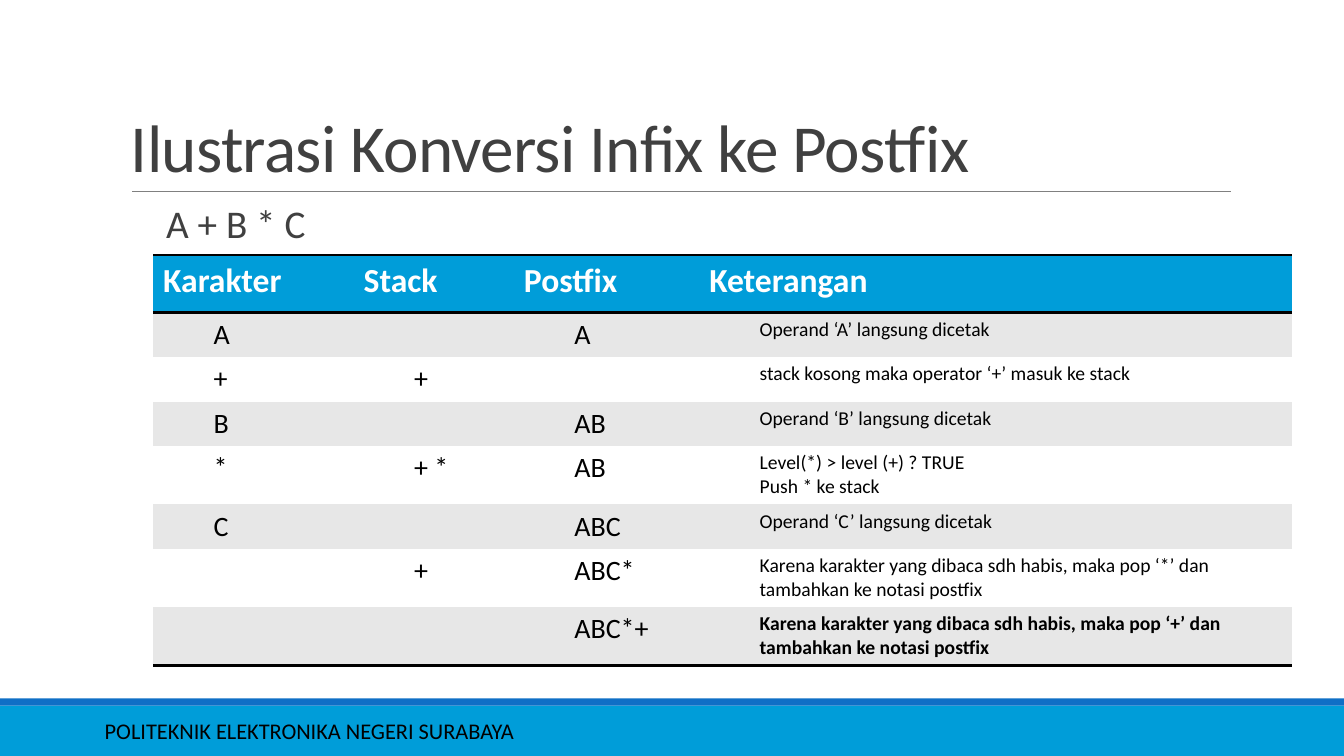
"""Build the slide that traces an infix to postfix conversion."""
from dataclasses import dataclass

from lxml.etree import SubElement
from pptx import Presentation
from pptx.dml.color import RGBColor as Rgb
from pptx.enum.shapes import MSO_CONNECTOR as Connector
from pptx.enum.shapes import MSO_SHAPE as Shape
from pptx.enum.text import MSO_ANCHOR as Anchor
from pptx.oxml import parse_xml
from pptx.oxml.ns import nsdecls, qn
from pptx.util import Cm, Pt


@dataclass(frozen=True)
class Theme:
    font: str = "Calibri"
    sky: str = "009DD9"
    blue: str = "0F6FC6"
    grey: str = "808080"
    charcoal: str = "404040"
    black: str = "000000"
    white: str = "FFFFFF"
    stripe: str = "E7E7E7"
    title: int = 48
    expression: int = 28
    header: int = 24
    symbol: int = 20
    footer: int = 16
    note: int = 14


THEME = Theme()
PLAIN_TABLE = "{2D5ABB26-0587-4C30-8999-92F81FD0307C}"
COLUMN_WIDTHS = (5.05, 4.04, 4.67, 14.94)
HEADER_HEIGHT, SINGLE_HEIGHT, DOUBLE_HEIGHT = 1.45, 1.12, 1.47
HEADINGS = ("Karakter", "Stack", "Postfix", "Keterangan")
STEPS = (
    ("A", "", "A", "Operand ‘A’ langsung dicetak"),
    ("+", "+", "", "stack kosong maka operator ‘+’ masuk ke stack"),
    ("B", "", "AB", "Operand ‘B’ langsung dicetak"),
    ("*", "+ *", "AB", "Level(*) > level (+) ? TRUE\nPush * ke stack"),
    ("C", "", "ABC", "Operand ‘C’ langsung dicetak"),
    ("", "+", "ABC*", "Karena karakter yang dibaca sdh habis, maka pop ‘*’ dan "
                      "tambahkan ke notasi postfix"),
    ("", "", "ABC*+", "Karena karakter yang dibaca sdh habis, maka pop ‘+’ dan "
                      "tambahkan ke notasi postfix"),
)


def apply(target, formats):
    for name, value in formats.items():
        setattr(target, name, value)


def style_font(font, size, color, bold=False):
    apply(font, {"name": THEME.font, "size": Pt(size), "bold": bold})
    font.color.rgb = Rgb.from_string(color)


def add_band(slide, top, height, color):
    band = slide.shapes.add_shape(Shape.RECTANGLE, 0, Cm(top), Cm(33.87), Cm(height))
    band.shadow.inherit = False
    band.fill.solid()
    band.fill.fore_color.rgb = Rgb.from_string(color)
    band.line.fill.background()


def add_rule(slide, left, right, top):
    rule = slide.shapes.add_connector(
        Connector.STRAIGHT, Cm(left), Cm(top), Cm(right), Cm(top))
    rule.line.width = Pt(0.5)
    rule.line.color.rgb = Rgb.from_string(THEME.grey)
    SubElement(rule._element.spPr, qn("a:effectLst"))


def add_text(slide, box, wording, size, color, frame_formats, line_spacing=1.0, tracking=0):
    frame = slide.shapes.add_textbox(*map(Cm, box)).text_frame
    apply(frame, {"word_wrap": True, **frame_formats})
    paragraph = frame.paragraphs[0]
    paragraph.line_spacing = line_spacing
    run = paragraph.add_run()
    run.text = wording
    style_font(run.font, size, color)
    if tracking:
        run.font._element.set("spc", str(tracking))


def border_cell(cell, edges):
    """Draw black borders on the named edges, in schema order: lnT, then lnB."""
    properties = cell._tc.get_or_add_tcPr()
    for position, edge in enumerate(edges):
        properties.insert(position, parse_xml(
            f'<a:{edge} {nsdecls("a")} w="{Pt(2)}"><a:solidFill>'
            f'<a:srgbClr val="{THEME.black}"/></a:solidFill></a:{edge}>'))


def fill_cell(cell, wording, background, size, color, bold=False, indent=0.0, edges=()):
    cell.fill.solid()
    cell.fill.fore_color.rgb = Rgb.from_string(background)
    border_cell(cell, edges)
    if not wording:
        return
    cell.text_frame.text = wording
    for paragraph in cell.text_frame.paragraphs:
        properties = paragraph._p.get_or_add_pPr()
        properties.set("marL", str(Cm(indent)))
        properties.set("indent", "0")
        for run in paragraph.runs:
            style_font(run.font, size, color, bold)


def add_trace_table(slide, left, top):
    heights = [HEADER_HEIGHT] + [
        DOUBLE_HEIGHT if len(step[-1]) > 50 or "\n" in step[-1] else SINGLE_HEIGHT
        for step in STEPS]
    trace = slide.shapes.add_table(
        len(heights), len(HEADINGS), Cm(left), Cm(top),
        Cm(sum(COLUMN_WIDTHS)), Cm(sum(heights))).table
    trace.horz_banding = False
    trace._tbl.tblPr.find(qn("a:tableStyleId")).text = PLAIN_TABLE
    for column, width in zip(trace.columns, COLUMN_WIDTHS):
        column.width = Cm(width)
    for row, height in zip(trace.rows, heights):
        row.height = Cm(height)

    for column, heading in enumerate(HEADINGS):
        fill_cell(trace.cell(0, column), heading, THEME.sky, THEME.header,
                  THEME.white, bold=True, edges=("lnT", "lnB"))
    for row, step in enumerate(STEPS, start=1):
        is_last = row == len(STEPS)
        for column, wording in enumerate(step):
            is_note = column == len(step) - 1
            fill_cell(trace.cell(row, column), wording,
                      THEME.stripe if row % 2 else THEME.white,
                      THEME.note if is_note else THEME.symbol, THEME.black,
                      bold=is_last and is_note, indent=1.27,
                      edges=("lnB",) if is_last else ())


def main():
    deck = Presentation()
    apply(deck, {"slide_width": Cm(33.87), "slide_height": Cm(19.05)})
    slide = deck.slides.add_slide(deck.slide_layouts[6])
    add_band(slide, 17.78, 1.27, THEME.sky)
    add_band(slide, 17.6, 0.18, THEME.blue)
    add_rule(slide, 3.33, 31.01, 4.83)
    add_text(slide, (2.39, 17.91, 21.36, 1.02), "POLITEKNIK ELEKTRONIKA NEGERI SURABAYA",
             THEME.footer, THEME.black, {"vertical_anchor": Anchor.MIDDLE})
    add_text(slide, (3.05, 0.79, 27.94, 4.04), "Ilustrasi Konversi Infix ke Postfix",
             THEME.title, THEME.charcoal, {"vertical_anchor": Anchor.BOTTOM},
             line_spacing=0.85, tracking=-50)
    add_text(slide, (4.19, 5.13, 8.33, 1.3), "A + B * C", THEME.expression,
             THEME.charcoal, {"margin_left": 0, "margin_right": 0}, line_spacing=0.8)
    add_trace_table(slide, 3.86, 6.43)
    deck.save("out.pptx")


if __name__ == "__main__":
    main()
